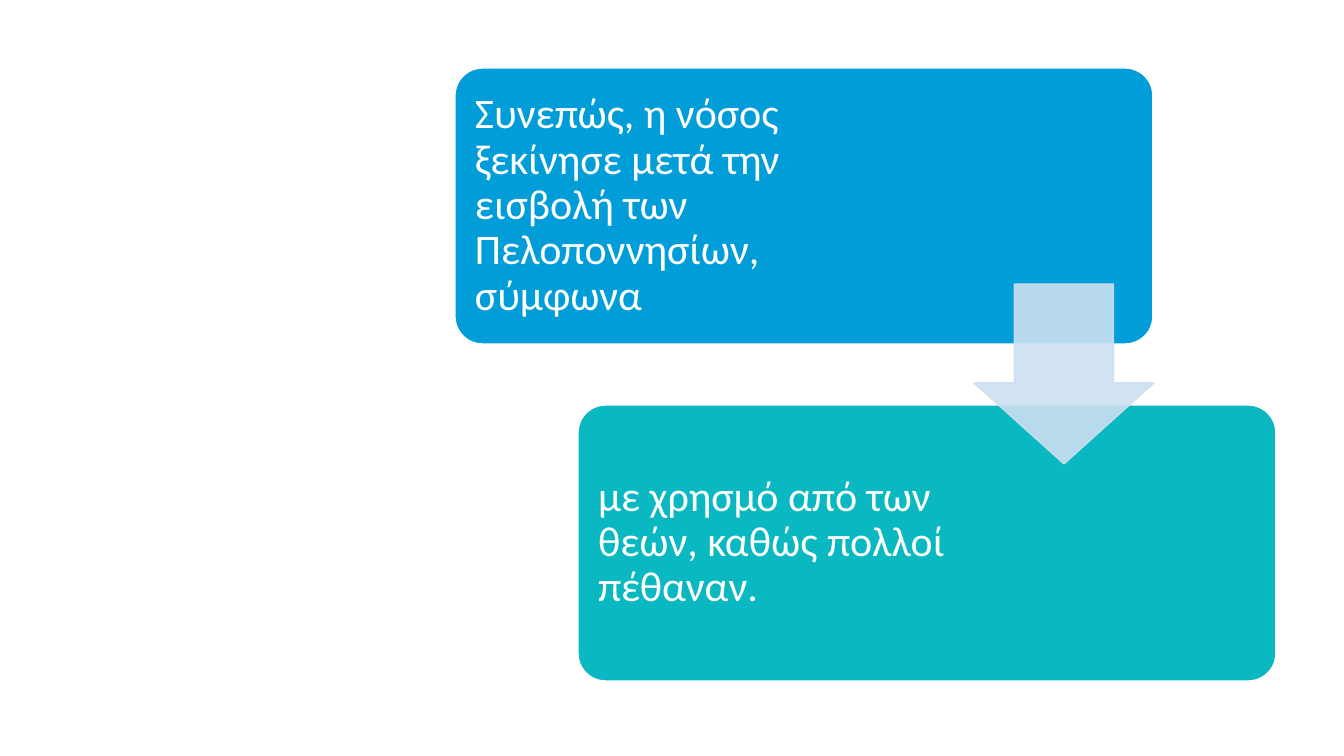
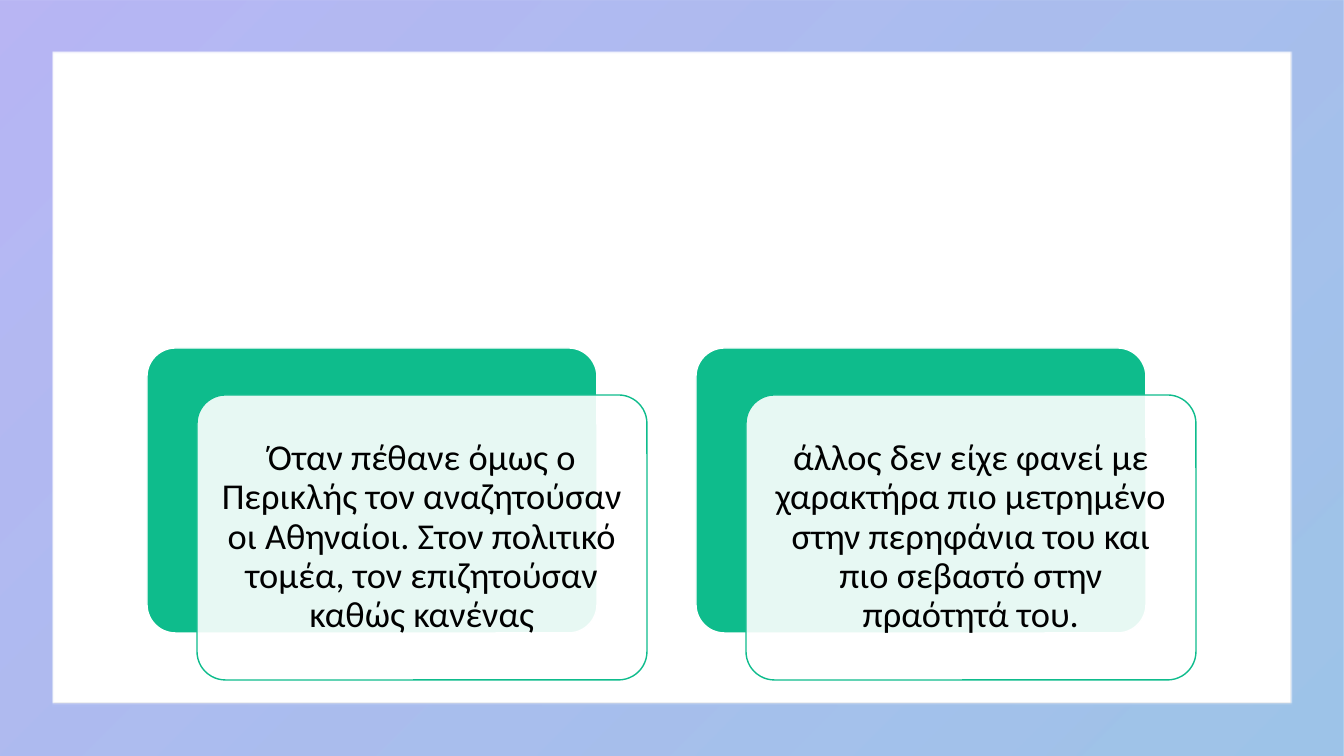
from dataclasses import dataclass

from lxml import etree
from pptx import Presentation
from pptx.dml.color import RGBColor
from pptx.enum.shapes import MSO_SHAPE
from pptx.enum.text import MSO_ANCHOR, PP_ALIGN
from pptx.oxml.ns import qn
from pptx.util import Emu, Pt

ROUNDED = MSO_SHAPE.ROUNDED_RECTANGLE
DOWN_ARROW = MSO_SHAPE.DOWN_ARROW
FRAME = MSO_SHAPE.FRAME
MIDDLE = MSO_ANCHOR.MIDDLE
LEFT, CENTER = PP_ALIGN.LEFT, PP_ALIGN.CENTER

EMU_PER_PX = 914400 / 100.8
SLIDE_WIDTH, SLIDE_HEIGHT = 1344, 756
FONT = "Calibri"
COLORS = {
    "white": "FFFFFF",
    "black": "000000",
    "blue": "009DD9",
    "teal": "09B8C0",
    "green": "0EBC8C",
    "pale_blue": "CCDFF1",
    "violet": "504CE5",
    "deep_blue": "0F6FC6",
}


@dataclass(frozen=True)
class Box:
    left: int
    top: int
    width: int
    height: int

    def moved(self, right: int, down: int) -> "Box":
        return Box(self.left + right, self.top + down, self.width, self.height)


@dataclass(frozen=True)
class TextStyle:
    size: int
    color: str
    alignment: PP_ALIGN
    inset: int


@dataclass(frozen=True)
class Step:
    text: str
    color: str
    box: Box
    right_inset: int


STEP_STYLE = TextStyle(30, "white", LEFT, 12)
PANEL_STYLE = TextStyle(26, "black", CENTER, 11)

STEPS = [
    Step("Συνεπώς, η νόσος ξεκίνησε μετά την εισβολή των Πελοποννησίων, σύμφωνα",
         "blue", Box(455, 68, 698, 276), 281),
    Step("με χρησμό από των θεών, καθώς πολλοί πέθαναν.",
         "teal", Box(578, 405, 698, 276), 314),
]
STEP_ARROW = Box(974, 284, 180, 180)

PANELS = [
    "Όταν πέθανε όμως ο Περικλής τον αναζητούσαν οι Αθηναίοι. "
    "Στον πολιτικό τομέα, τον επιζητούσαν καθώς κανένας",
    "άλλος δεν είχε φανεί με χαρακτήρα πιο μετρημένο στην περηφάνια του "
    "και πιο σεβαστό στην πραότητά του.",
]
FIRST_PANEL = Box(147, 348, 450, 285)
PANEL_PITCH = 549
FRONT_OFFSET = (50, 47)


def px(length: int) -> Emu:
    return Emu(round(length * EMU_PER_PX))


def rgb(name: str) -> RGBColor:
    return RGBColor.from_string(COLORS[name])


def set_opacity(element, percent: int) -> None:
    """Make every colour inside the element partly transparent."""
    for color in element.iter(qn("a:srgbClr")):
        etree.SubElement(color, qn("a:alpha")).set("val", str(percent * 1000))


def add_shape(slide, kind: MSO_SHAPE, box: Box, adjustments: list[float]):
    shape = slide.shapes.add_shape(
        kind, px(box.left), px(box.top), px(box.width), px(box.height))
    shape.shadow.inherit = False
    for index, value in enumerate(adjustments):
        shape.adjustments[index] = value
    return shape


def paint(shape, fill: str, line: str) -> None:
    shape.fill.solid()
    shape.fill.fore_color.rgb = rgb(fill)
    shape.line.color.rgb = rgb(line)
    shape.line.width = Pt(1)


def add_card(slide, box: Box, fill: str, line: str):
    card = add_shape(slide, ROUNDED, box, [0.1])
    paint(card, fill, line)
    return card


def write(shape, text: str, style: TextStyle, right_inset: int) -> None:
    frame = shape.text_frame
    frame.text = text
    frame.word_wrap = True
    frame.vertical_anchor = MIDDLE
    frame.margin_left = frame.margin_top = frame.margin_bottom = px(style.inset)
    frame.margin_right = px(right_inset)
    paragraph = frame.paragraphs[0]
    paragraph.alignment = style.alignment
    paragraph.line_spacing = 0.9
    font = paragraph.runs[0].font
    font.name = FONT
    font.size = Pt(style.size)
    font.color.rgb = rgb(style.color)


def add_gradient_frame(slide) -> None:
    border = add_shape(slide, FRAME, Box(0, 0, SLIDE_WIDTH, SLIDE_HEIGHT), [0.07])
    border.adjustments[0] = 0.07
    border.line.fill.background()
    border.fill.gradient()
    border.fill.gradient_angle = 315
    stops = zip(border.fill.gradient_stops, ("violet", "deep_blue"), (0.02, 1))
    for stop, color, position in stops:
        stop.color.rgb = rgb(color)
        stop.position = position
    set_opacity(border.element.spPr, 40)


def build_steps(slide) -> None:
    for step in STEPS:
        card = add_card(slide, step.box, step.color, "white")
        write(card, step.text, STEP_STYLE, step.right_inset)
    arrow = add_shape(slide, DOWN_ARROW, STEP_ARROW, [0.55, 0.45])
    paint(arrow, "pale_blue", "pale_blue")
    set_opacity(arrow.element.spPr, 90)


def build_panels(slide) -> None:
    add_gradient_frame(slide)
    for index, text in enumerate(PANELS):
        back = FIRST_PANEL.moved(index * PANEL_PITCH, 0)
        add_card(slide, back, "green", "white")
        front = add_card(slide, back.moved(*FRONT_OFFSET), "white", "green")
        set_opacity(front.element.spPr.find(qn("a:solidFill")), 90)
        write(front, text, PANEL_STYLE, PANEL_STYLE.inset)


def main() -> None:
    presentation = Presentation()
    presentation.slide_width = px(SLIDE_WIDTH)
    presentation.slide_height = px(SLIDE_HEIGHT)
    blank_layout = presentation.slide_layouts[6]
    for build in (build_steps, build_panels):
        build(presentation.slides.add_slide(blank_layout))
    presentation.save("out.pptx")


if __name__ == "__main__":
    main()
